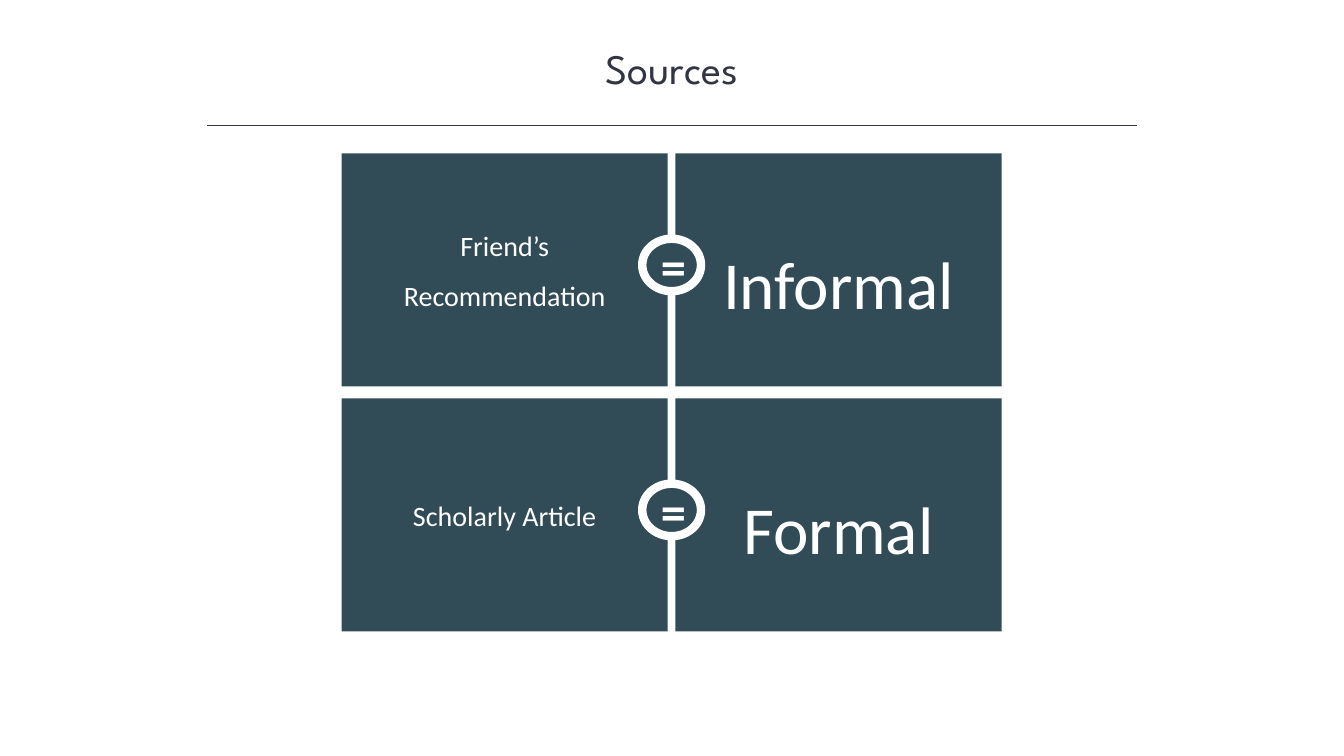
from pptx import Presentation
from pptx.dml.color import RGBColor
from pptx.enum.shapes import MSO_CONNECTOR, MSO_SHAPE
from pptx.enum.text import MSO_ANCHOR, MSO_AUTO_SIZE, PP_ALIGN
from pptx.oxml.ns import qn
from pptx.util import Pt
from lxml.etree import SubElement

INK = RGBColor(0x32, 0x35, 0x42)
TEAL = RGBColor(0x31, 0x4C, 0x57)
WHITE = RGBColor(0xFF, 0xFF, 0xFF)

TILE_WIDTH, TILE_HEIGHT = 233, 166.5
LEFT_TILE, RIGHT_TILE = 244, 482.5
FIRST_ROW, ROW_STEP = 109.5, 175
LABEL_WIDTH = 186
BADGE_WIDTH, BADGE_HEIGHT = 42, 37.5
PAIRS = [("Friend’s Recommendation", 76.5, "Informal"),
         ("Scholarly Article", 39.5, "Formal")]


def write(box, text, size, font, color, bold=False, spacing=1.0):
    """Set one centred, formatted paragraph in a shape."""
    frame = box.text_frame
    frame.text = text
    frame.word_wrap = True
    frame.vertical_anchor = MSO_ANCHOR.MIDDLE
    para = frame.paragraphs[0]
    para.alignment = PP_ALIGN.CENTER
    para.line_spacing = spacing
    span = para.runs[0].font
    span.size, span.name, span.bold = Pt(size), font, bold
    span.color.rgb = color


def add_block(page, kind, left, top, width, height):
    """Add a plain teal shape without line or shadow."""
    block = page.shapes.add_shape(kind, Pt(left), Pt(top), Pt(width), Pt(height))
    block.shadow.inherit = False
    block.fill.solid()
    block.fill.fore_color.rgb = TEAL
    block.line.fill.background()
    return block


def add_title(page, text):
    """Place and format the slide title."""
    title = page.shapes.title
    title.left, title.top, title.width, title.height = Pt(120), Pt(26.5), Pt(720), Pt(44)
    write(title, text, 30, "League Spartan", INK)
    title.text_frame.auto_size = MSO_AUTO_SIZE.NONE


def add_rule(page):
    """Draw the thin line under the title."""
    rule = page.shapes.add_connector(MSO_CONNECTOR.STRAIGHT, Pt(148), Pt(89.5), Pt(812), Pt(89.5))
    rule.line.color.rgb = INK
    rule.line.width = Pt(1)
    SubElement(rule._element.spPr, qn("a:effectLst"))


def add_label(page, tile_left, middle, height, text, size):
    """Add a text label centred across a tile."""
    left = tile_left + (TILE_WIDTH - LABEL_WIDTH) / 2
    label = add_block(page, MSO_SHAPE.RECTANGLE, left, middle - height / 2, LABEL_WIDTH, height)
    write(label, text, size, "Calibri", WHITE, spacing=1.5)


def add_badge(page, middle):
    """Add the ringed equals sign between two tiles."""
    center = (LEFT_TILE + RIGHT_TILE + TILE_WIDTH) / 2
    badge = add_block(page, MSO_SHAPE.OVAL, center - BADGE_WIDTH / 2,
                      middle - BADGE_HEIGHT / 2, BADGE_WIDTH, BADGE_HEIGHT)
    badge.line.color.rgb = WHITE
    badge.line.width = Pt(6)
    write(badge, "=", 36, "Calibri", WHITE, bold=True)


def add_pair(page, top, source, source_height, category):
    """Add a row that equates a source with its category."""
    middle = top + TILE_HEIGHT / 2
    for left in (LEFT_TILE, RIGHT_TILE):
        add_block(page, MSO_SHAPE.RECTANGLE, left, top, TILE_WIDTH, TILE_HEIGHT)
    add_badge(page, middle - 3.5)
    add_label(page, LEFT_TILE, middle - 5.5, source_height, source, 20)
    add_label(page, RIGHT_TILE, middle - 5.5, 85.5, category, 48)


def main():
    """Build and save the slide."""
    deck = Presentation()
    deck.slide_width, deck.slide_height = Pt(960), Pt(540)
    page = deck.slides.add_slide(deck.slide_layouts[5])
    add_title(page, "Sources")
    add_rule(page)
    for row, pair in enumerate(PAIRS):
        add_pair(page, FIRST_ROW + row * ROW_STEP, *pair)
    deck.save("out.pptx")


if __name__ == "__main__":
    main()
